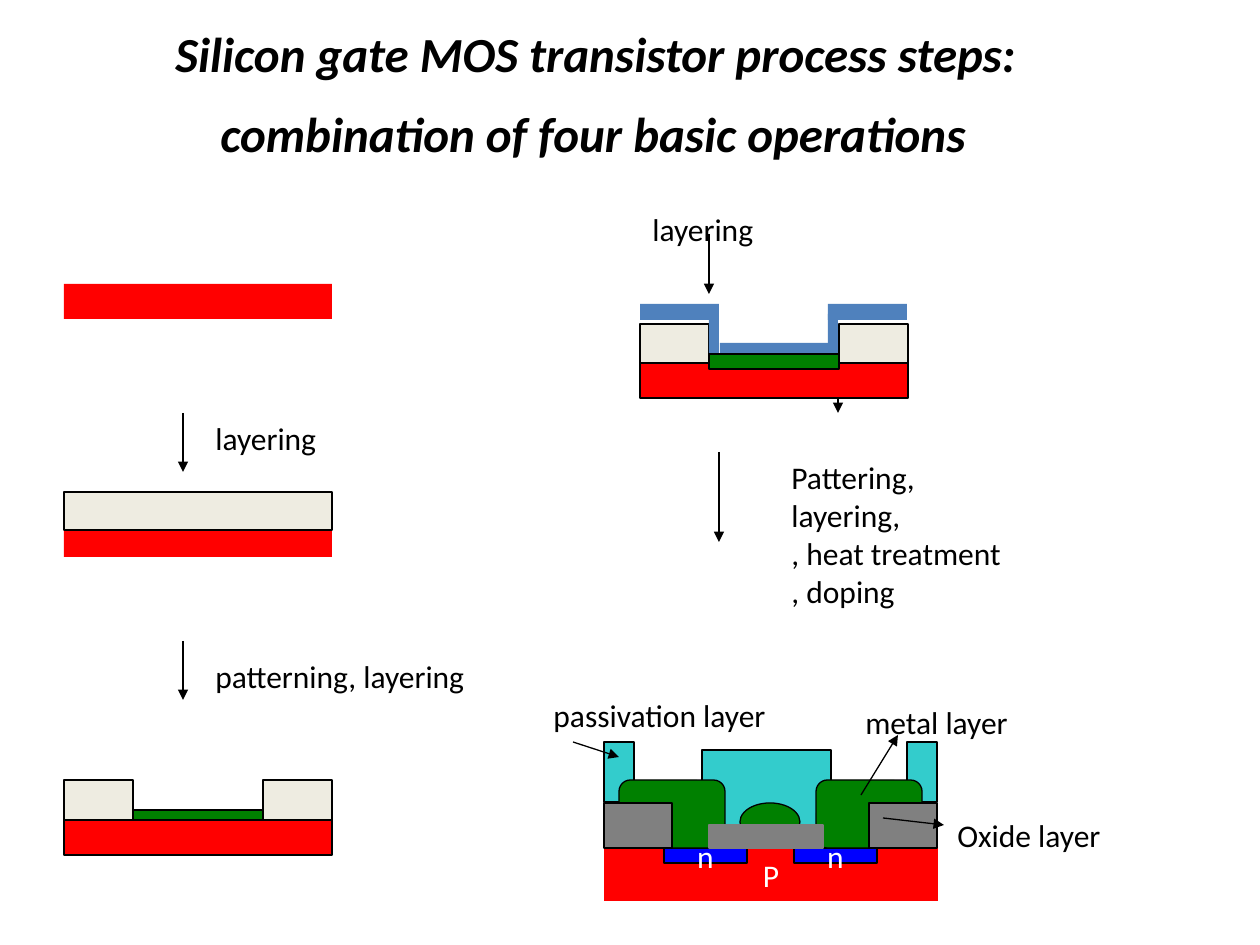
import pptx
import pptx.util
import pptx.dml.color
import pptx.enum.shapes
import pptx.enum.text
import pptx.oxml
import pptx.oxml.ns

SCALE = 914400 / 126  # EMU in one px
SHAPE = pptx.enum.shapes.MSO_SHAPE
ALIGN = pptx.enum.text.PP_ALIGN
ANCHOR = pptx.enum.text.MSO_ANCHOR


class Theme:
    font = "Calibri"
    title, spacer, body, line = 28, 40, 18, 0.75
    ink, white = "000000", "FFFFFF"
    silicon, oxide, gate, poly = "FF0000", "EEECE1", "008000", "4F81BD"
    doped, passivation, metal, field = "0000FF", "33CCCC", "008000", "808080"


TITLE = ("Silicon gate MOS transistor process steps: ",
         "combination of four basic operations")
TITLE_BOX = (-15, 16, 1232, 158)

# left, top, width, height, lines
STEP_LABELS = [
    (203, 413, 136, 50, ["layering"]),
    (203, 651, 294, 50, ["patterning, layering"]),
    (640, 204, 136, 50, ["layering"]),
    (779, 452, 246, 164,
     ["Pattering,", "layering,", ", heat treatment", ", doping"]),
]
PART_LABELS = [
    (541, 690, 260, 50, ["passivation layer"]),
    (853, 697, 179, 50, ["metal layer"]),
    (945, 810, 184, 50, ["Oxide layer"]),
]

# from x, from y, to x, to y
STEP_ARROWS = [
    (183, 413, 183, 472), (183, 641, 183, 700), (709, 234, 709, 294),
    (719, 452, 719, 542), (838, 354, 838, 413),
]
PART_ARROWS = [
    (573, 742, 619, 757), (861, 795, 898, 735), (883, 818, 944, 825),
]

WAFER_W, WAFER_H = 268, 35
WELL_W = 69
STEP1, STEP2, STEP3, STEP4 = (64, 284), (64, 492), (64, 780), (640, 324)
POLY = [
    (640, 304, 69, 16), (709, 304, 10, 49), (720, 343, 118, 10),
    (828, 314, 10, 49), (828, 304, 79, 16),
]

# Transistor: box, fill, line, preset, text, mirrored about the middle
MIRROR_SUM = 1541
T = Theme
TRANSISTOR = [
    ((604, 848, 334, 53), T.silicon, None, SHAPE.RECTANGLE, "P", False),
    ((664, 848, 83, 15), T.doped, T.ink, SHAPE.RECTANGLE, "n", True),
    ((604, 742, 30, 60), T.passivation, T.ink, SHAPE.RECTANGLE, "", True),
    ((702, 750, 129, 76), T.passivation, T.ink, SHAPE.RECTANGLE, "", False),
    ((619, 780, 106, 68), T.metal, T.ink, SHAPE.ROUNDED_RECTANGLE, "", True),
    ((740, 803, 60, 38), T.metal, T.ink, SHAPE.OVAL, "", False),
    ((709, 825, 114, 23), T.field, T.field, SHAPE.RECTANGLE, "", False),
    ((604, 803, 68, 45), T.field, T.ink, SHAPE.RECTANGLE, "", True),
]


def px(*values):
    return [round(v * SCALE) for v in values]


def rgb(color):
    return pptx.dml.color.RGBColor.from_string(color)


def add_text(p, text, size=T.body, color=T.ink, bold=False, italic=False):
    r = p.add_run()
    r.text = text
    f = r.font
    f.name, f.size, f.bold, f.italic = T.font, pptx.util.Pt(size), bold, italic
    f.color.rgb = rgb(color)


def add_title(slide):
    sp = slide.shapes.title
    sp.left, sp.top, sp.width, sp.height = px(*TITLE_BOX)
    tf = sp.text_frame
    tf.auto_size = pptx.enum.text.MSO_AUTO_SIZE.NONE
    tf.vertical_anchor = ANCHOR.MIDDLE
    p = tf.paragraphs[0]
    p.alignment = ALIGN.CENTER
    add_text(p, TITLE[0], size=T.title, bold=True, italic=True)
    p.add_line_break()
    add_text(p, TITLE[1], size=T.title, bold=True, italic=True)
    add_text(p, " ", size=T.spacer)


def add_label(slide, x, y, w, h, lines):
    tf = slide.shapes.add_textbox(*px(x, y, w, h)).text_frame
    tf.word_wrap = False
    for i, line in enumerate(lines):
        p = tf.add_paragraph() if i else tf.paragraphs[0]
        add_text(p, line)


def add_arrow(slide, *ends):
    line = pptx.enum.shapes.MSO_CONNECTOR.STRAIGHT
    sp = slide.shapes.add_connector(line, *px(*ends))
    sp.line.color.rgb = rgb(T.ink)
    sp.line.width = pptx.util.Pt(T.line)
    tail = pptx.oxml.ns.qn("a:tailEnd")
    sp.line._get_or_add_ln().makeelement(tail)
    ln = sp.line._get_or_add_ln()
    ln.append(ln.makeelement(tail, {"type": "triangle"}))
    pr = sp._element.spPr
    pr.append(pr.makeelement(pptx.oxml.ns.qn("a:effectLst")))


def add_layer(slide, box, fill, line=None, preset=SHAPE.RECTANGLE, text=""):
    sp = slide.shapes.add_shape(preset, *px(*box))
    sp.shadow.inherit = False
    sp.fill.solid()
    sp.fill.fore_color.rgb = rgb(fill)
    if line:
        sp.line.color.rgb = rgb(line)
        sp.line.width = pptx.util.Pt(T.line)
    else:
        sp.line.fill.background()
    if text:
        tf = sp.text_frame
        tf.word_wrap = False
        tf.vertical_anchor = ANCHOR.MIDDLE
        tf.paragraphs[0].alignment = ALIGN.CENTER
        add_text(tf.paragraphs[0], text, color=T.white)


def add_wells(slide, x, y):
    """Two oxide blocks standing on a wafer."""
    for left in (x, x + WAFER_W - WELL_W):
        add_layer(slide, (left, y, WELL_W, 48), T.oxide, T.ink)


def add_gate(slide, x, y):
    box = (x + WELL_W, y + 30, WAFER_W - 2 * WELL_W, 15)
    add_layer(slide, box, T.gate, T.ink)


def add_wafer(slide, x, y, line=None):
    add_layer(slide, (x, y, WAFER_W, WAFER_H), T.silicon, line)


def add_steps(slide):
    add_wafer(slide, *STEP1)

    x, y = STEP2
    add_wafer(slide, x, y + 30)
    add_layer(slide, (x, y, WAFER_W, 38), T.oxide, T.ink)

    x, y = STEP3
    add_wells(slide, x, y)
    add_gate(slide, x, y)
    add_wafer(slide, x, y + 40, T.ink)

    x, y = STEP4
    add_wells(slide, x, y)
    add_wafer(slide, x, y + 39, T.ink)
    for box in POLY:
        add_layer(slide, box, T.poly)
    add_gate(slide, x, y)


def add_transistor(slide):
    for box, fill, line, preset, text, mirrored in TRANSISTOR:
        add_layer(slide, box, fill, line, preset, text)
        if mirrored:
            x, y, w, h = box
            twin = (MIRROR_SUM - x - w, y, w, h)
            add_layer(slide, twin, fill, line, preset, text)


def main():
    prs = pptx.Presentation()
    prs.slide_width, prs.slide_height = px(1260, 945)
    slide = prs.slides.add_slide(prs.slide_layouts[5])
    add_title(slide)
    for label in STEP_LABELS:
        add_label(slide, *label)
    for arrow in STEP_ARROWS:
        add_arrow(slide, *arrow)
    add_steps(slide)
    add_transistor(slide)
    for label in PART_LABELS:
        add_label(slide, *label)
    for arrow in PART_ARROWS:
        add_arrow(slide, *arrow)
    prs.save("out.pptx")


if __name__ == "__main__":
    main()
